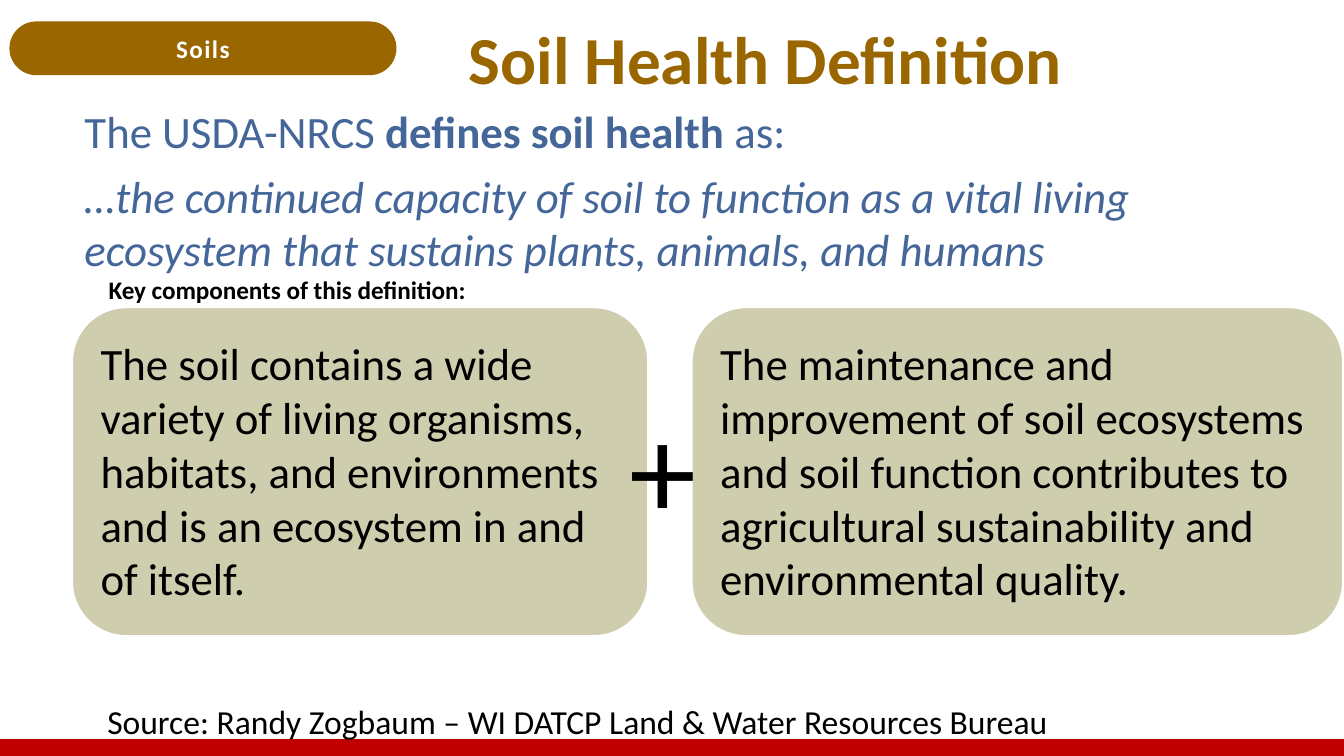
import pptx
import pptx.util
import pptx.dml.color
import pptx.enum.shapes
import pptx.enum.text

WIDTH = 10
HEIGHT = WIDTH * 9 / 16
FONT = "Calibri"
BROWN, BLUE, BLACK, WHITE = "996600", "446699", "000000", "FFFFFF"
SAND, RED = "CECDAD", "C00000"
RECTANGLE = pptx.enum.shapes.MSO_SHAPE.RECTANGLE
ROUNDED = pptx.enum.shapes.MSO_SHAPE.ROUNDED_RECTANGLE
CENTER = pptx.enum.text.PP_ALIGN.CENTER
MIDDLE = pptx.enum.text.MSO_ANCHOR.MIDDLE
TOP = pptx.enum.text.MSO_ANCHOR.TOP

TOPIC = "Soils"
TITLE = "Soil Health Definition"
DEFINITION = [
    [("The USDA-NRCS ", False, False), ("defines soil health ", True, False), ("as:", False, False)],
    [("…the continued capacity of soil to function as a vital living "
      "ecosystem that sustains plants, animals, and humans", False, True)],
]
COMPONENTS_LABEL = "Key components of this definition:"
COMPONENTS = [
    (0.53, 4.3, "The soil contains a wide variety of living organisms, habitats, "
                "and environments and is an ecosystem in and of itself."),
    (5.14, 4.86, "The maintenance and improvement of soil ecosystems and soil function "
                 "contributes to agricultural sustainability and environmental quality."),
]
COMPONENT_TOP, COMPONENT_HEIGHT = 2.28, 2.46
SOURCE = "Source: Randy Zogbaum – WI DATCP Land & Water Resources Bureau"
FOOTER_TOP = 5.5


def color(value):
    return pptx.dml.color.RGBColor.from_string(value)


def inches(*lengths):
    return [pptx.util.Inches(length) for length in lengths]


def style(paragraph, size, text_color, bold=False, align=None):
    paragraph.alignment = align
    paragraph.font.name = FONT
    paragraph.font.size = pptx.util.Pt(size)
    paragraph.font.bold = bold
    paragraph.font.color.rgb = color(text_color)


def write(shape, text, size, text_color, bold=False, align=None, anchor=TOP):
    frame = shape.text_frame
    frame.word_wrap = True
    frame.vertical_anchor = anchor
    paragraph = frame.paragraphs[0]
    paragraph.text = text
    style(paragraph, size, text_color, bold, align)
    return paragraph


def add_box(slide, area, kind, fill, line=None):
    shape = slide.shapes.add_shape(kind, *inches(*area))
    shape.shadow.inherit = False
    shape.fill.solid()
    shape.fill.fore_color.rgb = color(fill)
    if line:
        shape.line.color.rgb = color(line)
        shape.line.width = pptx.util.Pt(2)
    else:
        shape.line.fill.background()
    return shape


def add_text(slide, area):
    return slide.shapes.add_textbox(*inches(*area))


def add_definition(slide):
    frame = add_text(slide, (0.53, 0.72, 8.32, 1.4)).text_frame
    frame.word_wrap = True
    for index, parts in enumerate(DEFINITION):
        paragraph = frame.add_paragraph() if index else frame.paragraphs[0]
        style(paragraph, 24, BLUE)
        if index:
            paragraph.space_before = pptx.util.Pt(6)
        for text, bold, italic in parts:
            run = paragraph.add_run()
            run.text = text
            run.font.bold = bold
            run.font.italic = italic


def add_components(slide):
    for left, width, text in COMPONENTS:
        area = (left, COMPONENT_TOP, width, COMPONENT_HEIGHT)
        box = add_box(slide, area, ROUNDED, SAND, WHITE)
        frame = box.text_frame
        frame.margin_left = frame.margin_right = pptx.util.Inches(0.1)
        frame.margin_top = frame.margin_bottom = pptx.util.Inches(0.1)
        write(box, text, 24, BLACK, align=pptx.enum.text.PP_ALIGN.LEFT)
    write(add_text(slide, (0.71, 1.99, 2.94, 0.33)), COMPONENTS_LABEL, 13.5, BLACK, True)
    plus = add_text(slide, (4.59, 2.31, 0.68, 2.31))
    plus.text_frame.margin_left = plus.text_frame.margin_right = 0
    write(plus, "+", 72, BLACK, align=CENTER, anchor=MIDDLE)


def main():
    presentation = pptx.Presentation()
    presentation.slide_width, presentation.slide_height = inches(WIDTH, HEIGHT)
    slide = presentation.slides.add_slide(presentation.slide_layouts[6])

    add_box(slide, (0, FOOTER_TOP, WIDTH, HEIGHT - FOOTER_TOP), RECTANGLE, RED)

    topic = add_box(slide, (0.07, 0.16, 2.88, 0.4), ROUNDED, BROWN)
    topic.adjustments[0] = 0.5
    paragraph = write(topic, TOPIC, 13.5, WHITE, True, CENTER, MIDDLE)
    paragraph.runs[0].font._element.set("spc", "80")

    title = write(add_text(slide, (3.39, 0.09, 4.66, 0.75)), TITLE, 36, BROWN, True, anchor=MIDDLE)
    title.line_spacing = 0.9

    write(add_text(slide, (0.7, 5.03, 7.2, 0.67)), SOURCE, 18, BLACK, anchor=MIDDLE)
    add_definition(slide)
    add_components(slide)

    presentation.save("out.pptx")


if __name__ == "__main__":
    main()
